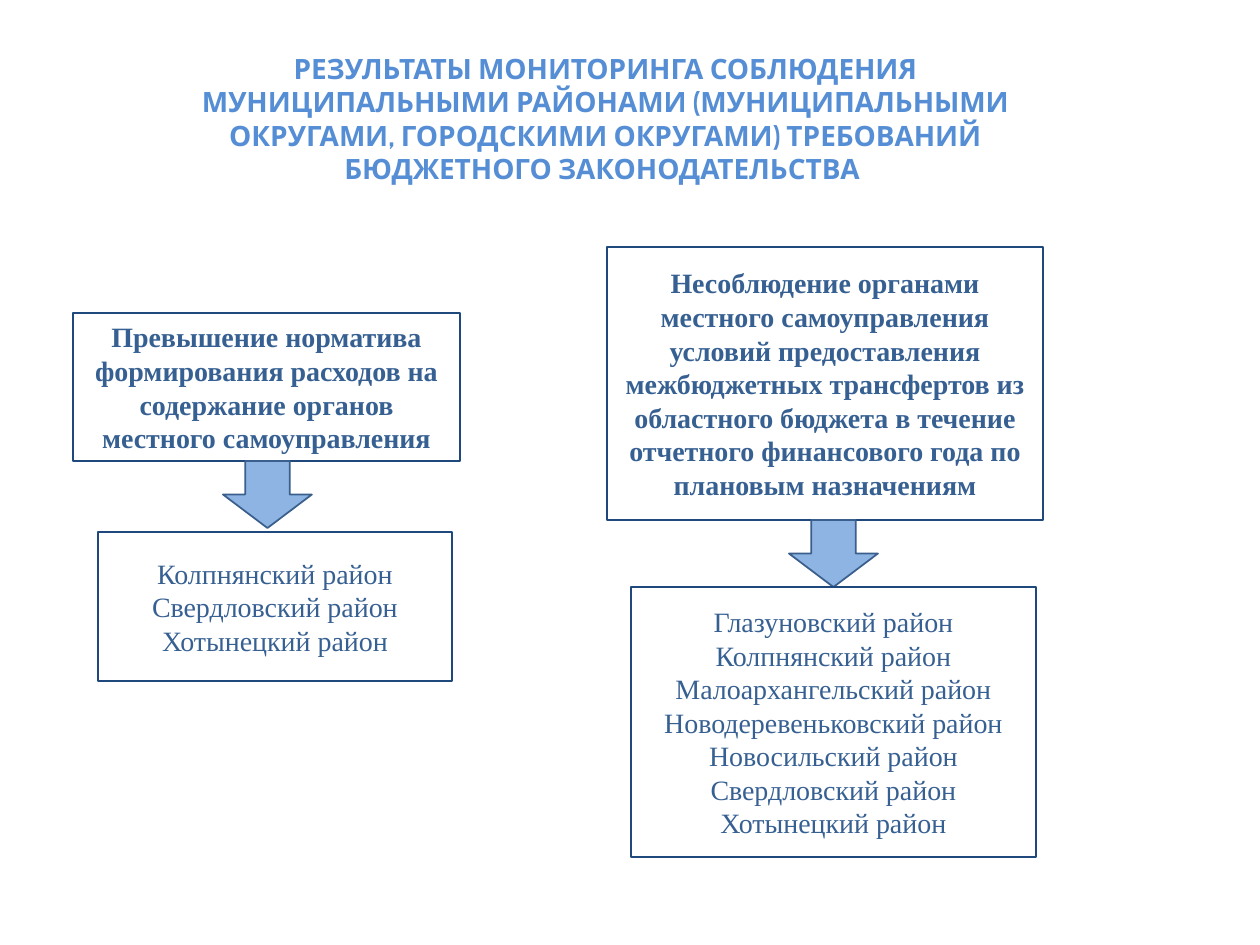
from pptx import Presentation
from pptx.dml.color import RGBColor
from pptx.enum.shapes import MSO_SHAPE
from pptx.enum.text import MSO_ANCHOR, MSO_AUTO_SIZE, PP_ALIGN
from pptx.util import Emu, Pt

RECT = MSO_SHAPE.RECTANGLE
ARROW = MSO_SHAPE.DOWN_ARROW
MIDDLE = MSO_ANCHOR.MIDDLE
CENTER = PP_ALIGN.CENTER
GROW = MSO_AUTO_SIZE.SHAPE_TO_FIT_TEXT

WHITE = RGBColor(0xFF, 0xFF, 0xFF)
SKY = RGBColor(0x55, 0x8E, 0xD5)
INK = RGBColor(0x37, 0x60, 0x92)
NAVY = RGBColor(0x1F, 0x49, 0x7D)
PALE = RGBColor(0x8E, 0xB4, 0xE3)
EDGE = RGBColor(0x3A, 0x5F, 0x8C)

SCALE = 914400 / 126

TITLE = (
    "РЕЗУЛЬТАТЫ МОНИТОРИНГА СОБЛЮДЕНИЯ МУНИЦИПАЛЬНЫМИ РАЙОНАМИ "
    "(МУНИЦИПАЛЬНЫМИ ОКРУГАМИ, ГОРОДСКИМИ ОКРУГАМИ) ТРЕБОВАНИЙ "
    "БЮДЖЕТНОГО ЗАКОНОДАТЕЛЬСТВА "
)
EXCESS = (
    "Превышение норматива формирования расходов на содержание органов "
    "местного самоуправления"
)
BREACH = (
    "Несоблюдение органами местного самоуправления условий предоставления "
    "межбюджетных трансфертов из областного бюджета в течение отчетного "
    "финансового года по плановым назначениям"
)
FEW = ["Колпнянский", "Свердловский", "Хотынецкий"]
MANY = ["Глазуновский", "Колпнянский", "Малоархангельский",
        "Новодеревеньковский", "Новосильский", "Свердловский", "Хотынецкий"]


def px(*sizes):
    return [Emu(round(size * SCALE)) for size in sizes]


class Deck:
    head = "Cabin"
    body = "Times New Roman"
    size = Pt(16)
    line = Pt(1)

    def __init__(self):
        self.show = Presentation()
        self.show.slide_width, self.show.slide_height = px(1260, 945)
        self.slide = self.show.slides.add_slide(self.show.slide_layouts[6])

    def label(self, frame, text, face, color, bold):
        frame.word_wrap = True
        frame.text = text
        for para in frame.paragraphs:
            para.alignment = CENTER
            for run in para.runs:
                run.font.name = face
                run.font.size = self.size
                run.font.bold = bold
                run.font.color.rgb = color

    def title(self, area, text):
        frame = self.slide.shapes.add_textbox(*px(*area)).text_frame
        self.label(frame, text, self.head, SKY, True)
        frame.auto_size = GROW

    def shape(self, kind, area, fill, edge):
        shape = self.slide.shapes.add_shape(kind, *px(*area))
        shape.shadow.inherit = False
        shape.fill.solid()
        shape.fill.fore_color.rgb = fill
        shape.line.color.rgb = edge
        shape.line.width = self.line
        return shape

    def box(self, area, text, bold=False):
        frame = self.shape(RECT, area, WHITE, NAVY).text_frame
        frame.vertical_anchor = MIDDLE
        self.label(frame, text, self.body, INK, bold)

    def arrow(self, left, top):
        self.shape(ARROW, (left, top, 89, 67), PALE, EDGE)

    def branch(self, cause, reason, left, result, names):
        self.box(cause, reason, True)
        self.arrow(left, cause[1] + cause[3])
        self.box(result, "\n".join(f"{name} район" for name in names))


def main():
    deck = Deck()
    deck.title((179, 45, 853, 149), TITLE)
    deck.branch((73, 313, 387, 148), EXCESS, 223, (98, 532, 354, 149), FEW)
    deck.branch((607, 247, 436, 273), BREACH, 789, (631, 587, 405, 270), MANY)
    deck.show.save("out.pptx")


if __name__ == "__main__":
    main()
